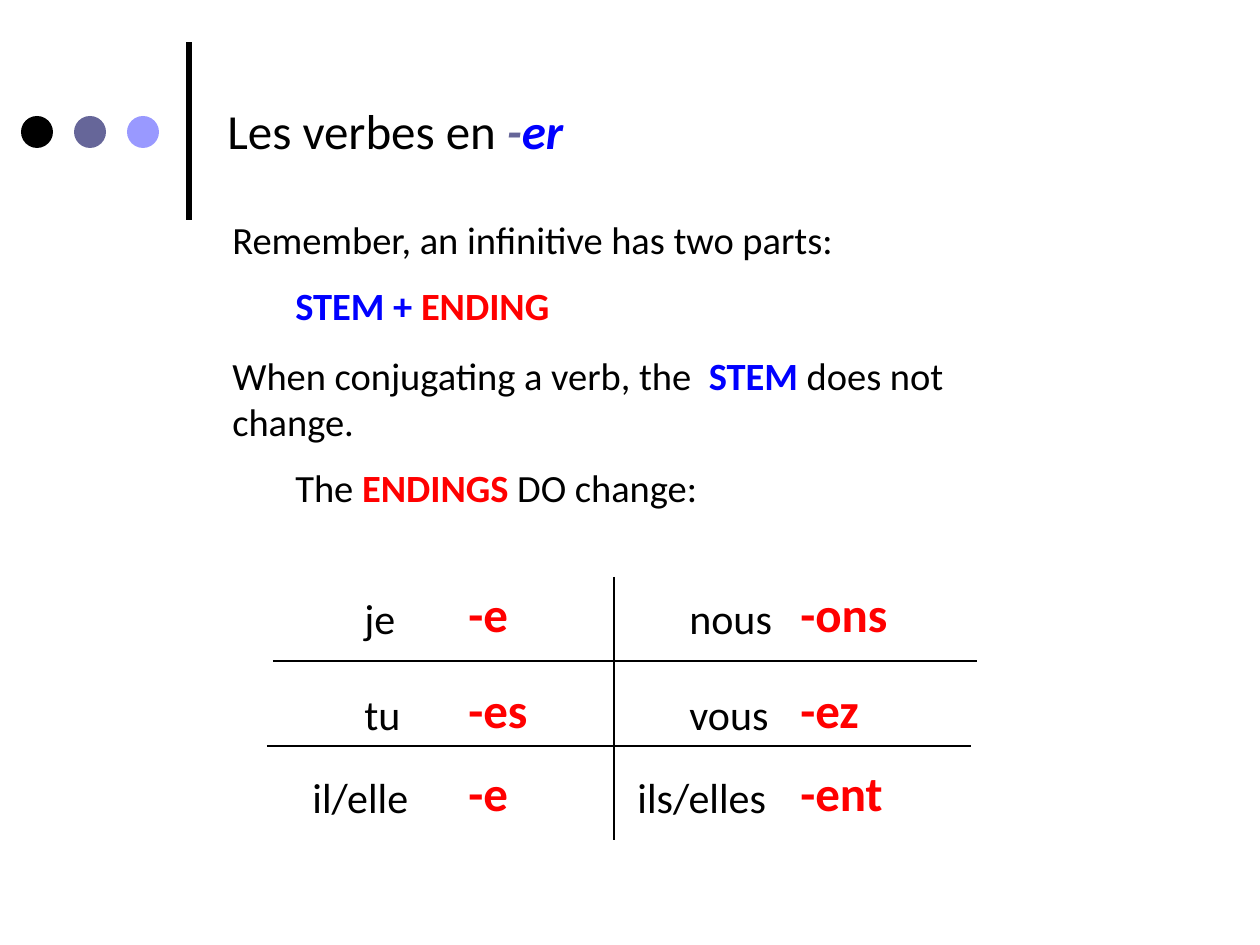
import pptx
import pptx.util
import pptx.dml.color
import pptx.enum.shapes
import pptx.enum.text
import lxml.etree

RGB = pptx.dml.color.RGBColor
BLACK = RGB(0, 0, 0)
SLATE = RGB(0x66, 0x66, 0x99)
LILAC = RGB(0x99, 0x99, 0xFF)
BLUE = RGB(0, 0, 0xFF)
RED = RGB(0xFF, 0, 0)

FONT = "Calibri"
PX = 914400 // 126
INDENT = 63

# Run: text, colour, bold, italic. Paragraph: level, runs.
TITLE = [(0, [("Les verbes en ", BLACK, False, False),
              ("-", SLATE, True, True),
              ("er", BLUE, True, True)])]
PARTS = [(0, [("Remember, an infinitive has two parts:", BLACK, False, False)]),
         (1, [("STEM + ", BLUE, True, False),
              ("ENDING", RED, True, False)])]
CHANGE = [(0, [("When conjugating a verb, the  ", BLACK, False, False),
               ("STEM ", BLUE, True, False),
               ("does not change.", BLACK, False, False)]),
          (1, [("The ", BLACK, False, False),
               ("ENDINGS", RED, True, False),
               (" DO change:", BLACK, False, False)])]

# Left, top, width, height, size, paragraphs
TEXTS = [(215, 94, 788, 72, 28, TITLE),
         (220, 210, 819, 130, 22, PARTS),
         (220, 346, 819, 176, 22, CHANGE)]

# Pronoun, its width, ending, its width; one list per half of the chart
VERBS = [[("je", 73, "-e", 136), ("tu", 95, "-es", 136), ("il/elle", 158, "-e", 158)],
         [("nous", 136, "-ons", 189), ("vous", 136, "-ez", 136),
          ("ils/elles", 168, "-ent", 189)]]
HALVES = [(352, 456), (677, 788)]   # left of pronouns, left of endings
ROWS = [577, 673, 756]
OUTDENT = 52                        # third person starts further left
DROP = 9                            # pronouns sit below the endings' top

# Start x, y, end x, y, weight
RULES = [(189, 220, 189, 42, 3),
         (614, 577, 614, 840, 0.75),
         (273, 661, 977, 661, 0.75),
         (267, 746, 971, 746, 0.75)]

DOTS = [BLACK, SLATE, LILAC]
DOT_LEFT, DOT_TOP, DOT_SIZE, DOT_STEP = 21, 116, 32, 53


def scale(*sides):
    return [side * PX for side in sides]


def add_text(slide, left, top, width, height, size, paras):
    box = slide.shapes.add_textbox(*scale(left, top, width, height))
    frame = box.text_frame
    frame.word_wrap = True
    frame.auto_size = pptx.enum.text.MSO_AUTO_SIZE.SHAPE_TO_FIT_TEXT
    for i, (level, runs) in enumerate(paras):
        para = frame.add_paragraph() if i else frame.paragraphs[0]
        para.level = level
        para.space_before = pptx.util.Pt(size / 2 if i else 0)
        if level:
            props = para._p.get_or_add_pPr()
            props.set("marL", str(INDENT * PX))
            props.set("indent", "0")
        for words, color, bold, italic in runs:
            run = para.add_run()
            run.text = words
            font = run.font
            font.name, font.size = FONT, pptx.util.Pt(size)
            font.bold, font.italic = bold, italic
            font.color.rgb = color


def add_rule(slide, x1, y1, x2, y2, weight):
    rule = slide.shapes.add_connector(
        pptx.enum.shapes.MSO_CONNECTOR.STRAIGHT, *scale(x1, y1, x2, y2))
    rule.line.color.rgb = BLACK
    rule.line.width = pptx.util.Pt(weight)
    lxml.etree.SubElement(rule._element.spPr, pptx.oxml.ns.qn("a:effectLst"))


def add_dots(slide):
    for i, color in enumerate(DOTS):
        dot = slide.shapes.add_shape(
            pptx.enum.shapes.MSO_SHAPE.OVAL,
            *scale(DOT_LEFT + i * DOT_STEP, DOT_TOP, DOT_SIZE, DOT_SIZE))
        dot.shadow.inherit = False
        dot.fill.solid()
        dot.fill.fore_color.rgb = color
        dot.line.fill.background()


def add_verbs(slide):
    for (left, end_left), half in zip(HALVES, VERBS):
        for i, (top, row) in enumerate(zip(ROWS, half)):
            noun, noun_width, ending, end_width = row
            noun_left = left - OUTDENT if i == 2 else left
            add_text(slide, noun_left, top + DROP, noun_width, 63, 24,
                     [(0, [(noun, BLACK, False, False)])])
            add_text(slide, end_left, top, end_width, 72, 28,
                     [(0, [(ending, RED, True, False)])])


def main():
    deck = pptx.Presentation()
    deck.slide_width, deck.slide_height = scale(1260, 945)
    slide = deck.slides.add_slide(deck.slide_layouts[6])
    add_dots(slide)
    for rule in RULES:
        add_rule(slide, *rule)
    for text in TEXTS:
        add_text(slide, *text)
    add_verbs(slide)
    deck.save("out.pptx")


if __name__ == "__main__":
    main()
